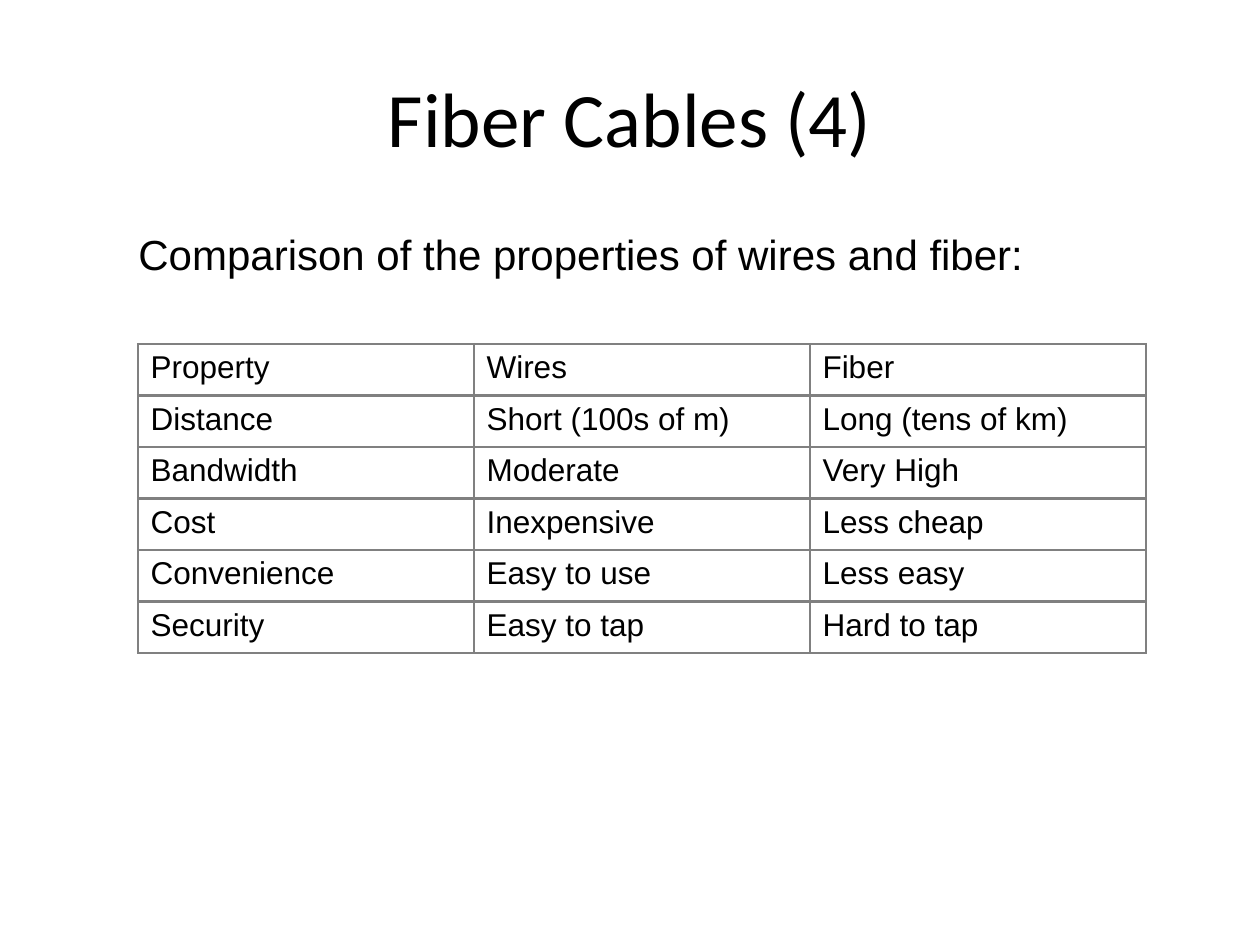
from lxml.etree import SubElement
from pptx import Presentation
from pptx.dml.color import RGBColor
from pptx.enum.text import MSO_ANCHOR, PP_ALIGN
from pptx.oxml.ns import qn
from pptx.util import Emu, Pt

# Content
TITLE = "Fiber Cables (4)"
INTRO = "Comparison of the properties of wires and fiber:"
PROPERTIES = [
    ("Property", "Wires", "Fiber"),
    ("Distance", "Short (100s of m)", "Long (tens of km)"),
    ("Bandwidth", "Moderate", "Very High"),
    ("Cost", "Inexpensive", "Less cheap"),
    ("Convenience", "Easy to use", "Less easy"),
    ("Security", "Easy to tap", "Hard to tap"),
]

# Layout in px, 126 px to the inch
SLIDE_SIZE = (1260, 945)
TITLE_BOX = (63, 38, 1134, 157)
INTRO_BOX = (126, 222, 1074, 634)
TABLE_BOX = (138, 344, 1008, 309)

BLACK, WHITE, GREY = "000000", "FFFFFF", "808080"
BORDER_WIDTH = Pt(1.5)


def px(length):
    return Emu(round(length * 914400 / 126))


def color(value):
    return RGBColor.from_string(value)


def write(frame, text, font, size):
    frame.text = text
    paragraph = frame.paragraphs[0]
    style = paragraph.runs[0].font
    style.name, style.size = font, Pt(size)
    style.bold = False
    style.color.rgb = color(BLACK)
    return paragraph


def add_text(slide, box, text, font, size):
    frame = slide.shapes.add_textbox(*map(px, box)).text_frame
    frame.word_wrap = True
    return frame, write(frame, text, font, size)


def add_borders(cell):
    properties = cell._tc.get_or_add_tcPr()
    for index, side in enumerate(("a:lnL", "a:lnR", "a:lnT", "a:lnB")):
        line = properties.makeelement(qn(side), {"w": str(BORDER_WIDTH)})
        fill = SubElement(line, qn("a:solidFill"))
        SubElement(fill, qn("a:srgbClr"), val=GREY)
        properties.insert(index, line)


def add_properties(slide):
    row_count, column_count = len(PROPERTIES), len(PROPERTIES[0])
    table = slide.shapes.add_table(row_count, column_count, *map(px, TABLE_BOX)).table
    table.first_row = table.horz_banding = False
    for column in table.columns:
        column.width = px(TABLE_BOX[2] / column_count)
    for row, values in zip(table.rows, PROPERTIES):
        row.height = px(TABLE_BOX[3] / row_count)
        for cell, value in zip(row.cells, values):
            write(cell.text_frame, value, "Arial", 18)
            cell.fill.solid()
            cell.fill.fore_color.rgb = color(WHITE)
            add_borders(cell)


def main():
    deck = Presentation()
    deck.slide_width, deck.slide_height = map(px, SLIDE_SIZE)
    slide = deck.slides.add_slide(deck.slide_layouts[6])

    # Introduction
    _, intro = add_text(slide, INTRO_BOX, INTRO, "Arial", 24)
    intro.space_before = Pt(3)

    # Title
    title_frame, title = add_text(slide, TITLE_BOX, TITLE, "Calibri", 44)
    title_frame.vertical_anchor = MSO_ANCHOR.MIDDLE
    title.alignment = PP_ALIGN.CENTER

    # Comparison table
    add_properties(slide)
    deck.save("out.pptx")


if __name__ == "__main__":
    main()
